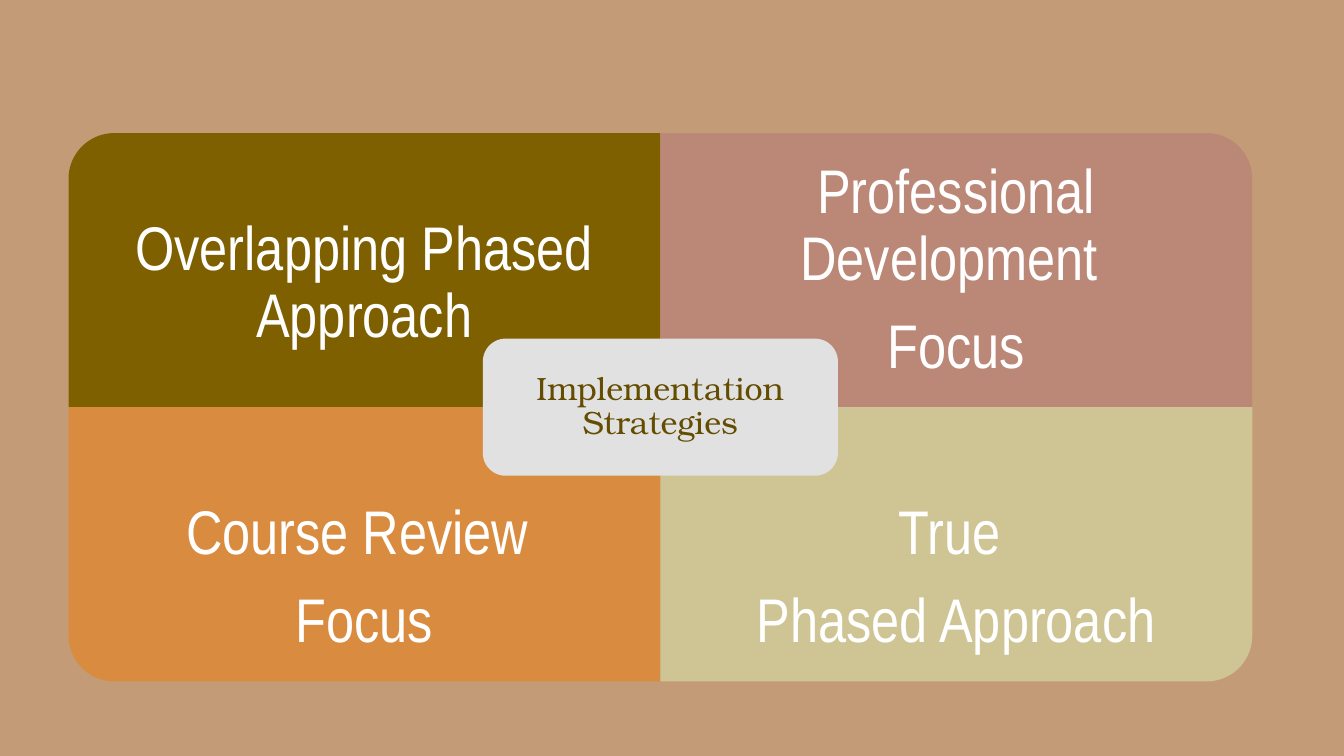
from dataclasses import dataclass

from pptx import Presentation
from pptx.dml.color import RGBColor
from pptx.enum.shapes import MSO_SHAPE
from pptx.enum.text import MSO_ANCHOR, PP_ALIGN
from pptx.util import Inches, Pt


@dataclass(frozen=True)
class Theme:
    """Colours, fonts and type sizes of the slide."""
    background: str = "C39B77"
    olive: str = "7F6000"
    rose: str = "BB8776"
    orange: str = "D98C3F"
    sand: str = "CFC493"
    hub: str = "E1E1E1"
    hub_text: str = "644C00"
    white: str = "FFFFFF"
    label_font: str = "Arial Narrow"
    hub_font: str = "TeX Gyre Bonum"
    label_size: int = 44
    hub_size: int = 23


THEME = Theme()
MATRIX = (0.68, 1.32, 11.74, 5.44)
QUADRANTS = [
    (0, 0, 270, THEME.olive, ["Overlapping Phased Approach"], 0.48, 0.34),
    (1, 0, 0, THEME.rose, ["Professional Development ", "Focus"], 0.35, 0.25),
    (0, 1, 180, THEME.orange, ["Course Review ", "Focus"], 0, 0.34),
    (1, 1, 90, THEME.sand, ["True ", "Phased Approach"], 0, 0.34),
]


def add_block(s, kind, box, color, rotation=0):
    """Add a flat filled shape that covers the box after its rotation."""
    x, y, w, h = box
    if rotation % 180:
        x, y, w, h = x + (w - h) / 2, y + (h - w) / 2, h, w
    sp = s.shapes.add_shape(kind, Inches(x), Inches(y), Inches(w), Inches(h))
    sp.rotation = rotation
    sp.shadow.inherit = False
    sp.fill.solid()
    sp.fill.fore_color.rgb = RGBColor.from_string(color)
    sp.line.fill.background()


def add_label(s, box, lines, font, size, color, inset):
    """Add centred text, one paragraph per line."""
    tf = s.shapes.add_textbox(*map(Inches, box)).text_frame
    tf.word_wrap = True
    tf.vertical_anchor = MSO_ANCHOR.MIDDLE
    tf.margin_left = tf.margin_right = Inches(inset)
    tf.margin_top = tf.margin_bottom = Inches(inset)
    tf.text = "\n".join(lines)
    for p in tf.paragraphs:
        p.alignment = PP_ALIGN.CENTER
        p.line_spacing = 0.9
        p.space_after = Pt(round(size * 0.35, 1))
        for r in p.runs:
            r.font.name = font
            r.font.size = Pt(size)
            r.font.color.rgb = RGBColor.from_string(color)


def add_quadrant(s, box, rotation, color, lines, drop, inset):
    """Add one quadrant, with its label away from the matrix centre."""
    x, y, w, h = box
    add_block(s, MSO_SHAPE.ROUND_1_RECTANGLE, box, color, rotation)
    text_h = h * 0.75
    top = y + h - text_h if rotation in (90, 180) else y
    add_label(s, (x, top + drop, w, text_h), lines,
              THEME.label_font, THEME.label_size, THEME.white, inset)


def add_hub(s, box):
    """Add the rounded title block in the middle of the box."""
    x, y, w, h = box
    hub_w, hub_h = w * 0.3, h * 0.25
    hub = (x + (w - hub_w) / 2, y + (h - hub_h) / 2, hub_w, hub_h)
    add_block(s, MSO_SHAPE.ROUNDED_RECTANGLE, hub, THEME.hub)
    add_label(s, hub, ["Implementation Strategies"],
              THEME.hub_font, THEME.hub_size, THEME.hub_text, 0.16)


def add_matrix(s, box):
    """Add four quadrants around a central hub."""
    x, y, w, h = box
    w2, h2 = w / 2, h / 2
    for col, row, *style in QUADRANTS:
        add_quadrant(s, (x + col * w2, y + row * h2, w2, h2), *style)
    add_hub(s, box)


def main():
    """Build and save the slide."""
    prs = Presentation()
    prs.slide_width, prs.slide_height = Inches(13.33), Inches(7.5)
    s = prs.slides.add_slide(prs.slide_layouts[6])
    s.background.fill.solid()
    s.background.fill.fore_color.rgb = RGBColor.from_string(THEME.background)
    add_matrix(s, MATRIX)
    prs.save("out.pptx")


if __name__ == "__main__":
    main()
